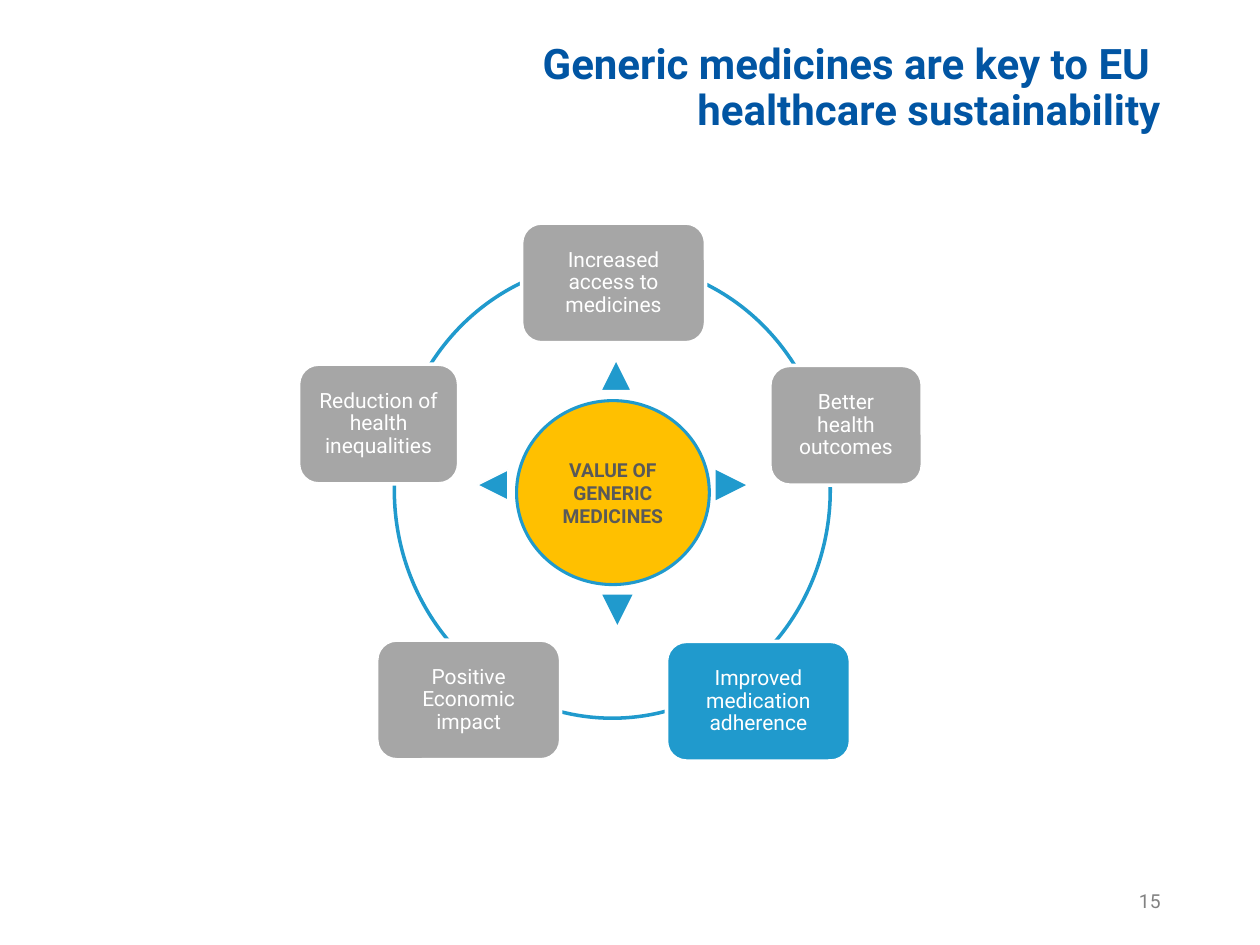
"""Builds a slide with five benefits on a ring around the value of generic medicines."""
from pptx import Presentation, util as u
from pptx.dml.color import RGBColor
from pptx.enum import shapes, text

NAVY = RGBColor(0x01, 0x55, 0xA3)
BLUE = RGBColor(0x20, 0x9A, 0xCD)
GREY = RGBColor(0xA6, 0xA6, 0xA6)
YELLOW = RGBColor(0xFF, 0xC0, 0x00)
DARK = RGBColor(0x59, 0x59, 0x59)
MUTED = RGBColor(0x82, 0x82, 0x82)
WHITE = RGBColor(0xFF, 0xFF, 0xFF)

FONT = "Roboto"
COLUMNS, ROWS = 100, 75
CARD_HEIGHT, CARD_RADIUS = 9.5, 1.58
ARROW_SIZE = 2.4

CARDS = [
    ("Increased access to medicines", 48.7, 22.45, 14.6, GREY),
    ("Better health outcomes", 67.15, 33.75, 12.1, GREY),
    ("Improved medication adherence", 60.2, 55.65, 14.6, BLUE),
    ("Positive Economic impact", 37.2, 55.55, 14.6, GREY),
    ("Reduction of health inequalities", 30.05, 33.65, 12.7, GREY),
]
ARROWS = [
    (48.9, 29.8, 0, WHITE),
    (49, 48.4, 180, None),
    (58, 38.5, 90, None),
    (39.1, 38.5, 270, WHITE),
]


def grid(prs, left, top, width, height):
    """Turn columns and rows of the slide's grid into lengths."""
    col, row = prs.slide_width / COLUMNS, prs.slide_height / ROWS
    return [u.Emu(round(v)) for v in (left * col, top * row, width * col, height * row)]


def centred(prs, x, y, width, height):
    """Give the grid box that has its middle at x, y."""
    return grid(prs, x - width / 2, y - height / 2, width, height)


def write(tf, lines, size, color, align, bold=False, spacing=None):
    """Write one paragraph, with a line break between the lines."""
    tf.word_wrap = True
    tf.vertical_anchor = text.MSO_ANCHOR.MIDDLE
    p = tf.paragraphs[0]
    p.alignment = align
    if spacing:
        p.line_spacing = spacing
    for i, line in enumerate(lines):
        if i:
            p.add_line_break()
        r = p.add_run()
        r.text = line
        r.font.name, r.font.size, r.font.bold = FONT, u.Pt(size), bold
        r.font.color.rgb = color


def add_shape(s, kind, box, fill=None, line=None, weight=0.75):
    """Add a flat preset shape."""
    sp = s.shapes.add_shape(kind, *box)
    sp.shadow.inherit = False
    if fill is None:
        sp.fill.background()
    else:
        sp.fill.solid()
        sp.fill.fore_color.rgb = fill
    if line is None:
        sp.line.fill.background()
    else:
        sp.line.color.rgb = line
        sp.line.width = u.Pt(weight)
    return sp


def add_title(prs, s):
    """Place and fill the title."""
    sp = s.shapes.title
    sp.left, sp.top, sp.width, sp.height = grid(prs, 6.9, -0.2, 86.2, 14.5)
    lines = ["Generic medicines are key to EU ", "healthcare sustainability"]
    write(sp.text_frame, lines, 24, NAVY, text.PP_ALIGN.RIGHT, True, 0.9)


def add_card(prs, s, label, x, y, width, fill):
    """Add a rounded benefit card."""
    box = centred(prs, x, y, width, CARD_HEIGHT)
    sp = add_shape(s, shapes.MSO_SHAPE.ROUNDED_RECTANGLE, box, fill, WHITE, 2)
    sp.adjustments[0] = CARD_RADIUS / CARD_HEIGHT
    tf = sp.text_frame
    tf.margin_left = tf.margin_right = tf.margin_top = tf.margin_bottom = u.Inches(0.1)
    write(tf, [label], 12, WHITE, text.PP_ALIGN.CENTER, spacing=0.9)


def add_hub(prs, s):
    """Add the central circle."""
    box = grid(prs, 41, 31.8, 15.3, 14.6)
    sp = add_shape(s, shapes.MSO_SHAPE.OVAL, box, YELLOW, BLUE, 1.75)
    write(sp.text_frame, ["VALUE OF GENERIC MEDICINES"], 11, DARK,
          text.PP_ALIGN.CENTER, True)


def add_arrow(prs, s, x, y, rotation, line):
    """Add a triangle that points away from the hub."""
    box = centred(prs, x, y, ARROW_SIZE, ARROW_SIZE)
    sp = add_shape(s, shapes.MSO_SHAPE.ISOSCELES_TRIANGLE, box, BLUE, line)
    sp.rotation = rotation


def add_page_number(prs, s):
    """Add the slide number."""
    sp = s.shapes.add_textbox(*grid(prs, 70.6, 69.5, 22.5, 4))
    write(sp.text_frame, ["15"], 11, MUTED, text.PP_ALIGN.RIGHT)


def main():
    """Build and save the slide."""
    prs = Presentation()
    prs.slide_width, prs.slide_height = u.Inches(10), u.Inches(7.5)
    s = prs.slides.add_slide(prs.slide_layouts[5])
    add_title(prs, s)
    add_page_number(prs, s)
    add_shape(s, shapes.MSO_SHAPE.OVAL, grid(prs, 31.3, 20.8, 34.6, 36.2), line=BLUE, weight=2)
    for card in CARDS:
        add_card(prs, s, *card)
    add_hub(prs, s)
    for arrow in ARROWS:
        add_arrow(prs, s, *arrow)
    prs.save("out.pptx")


if __name__ == "__main__":
    main()
